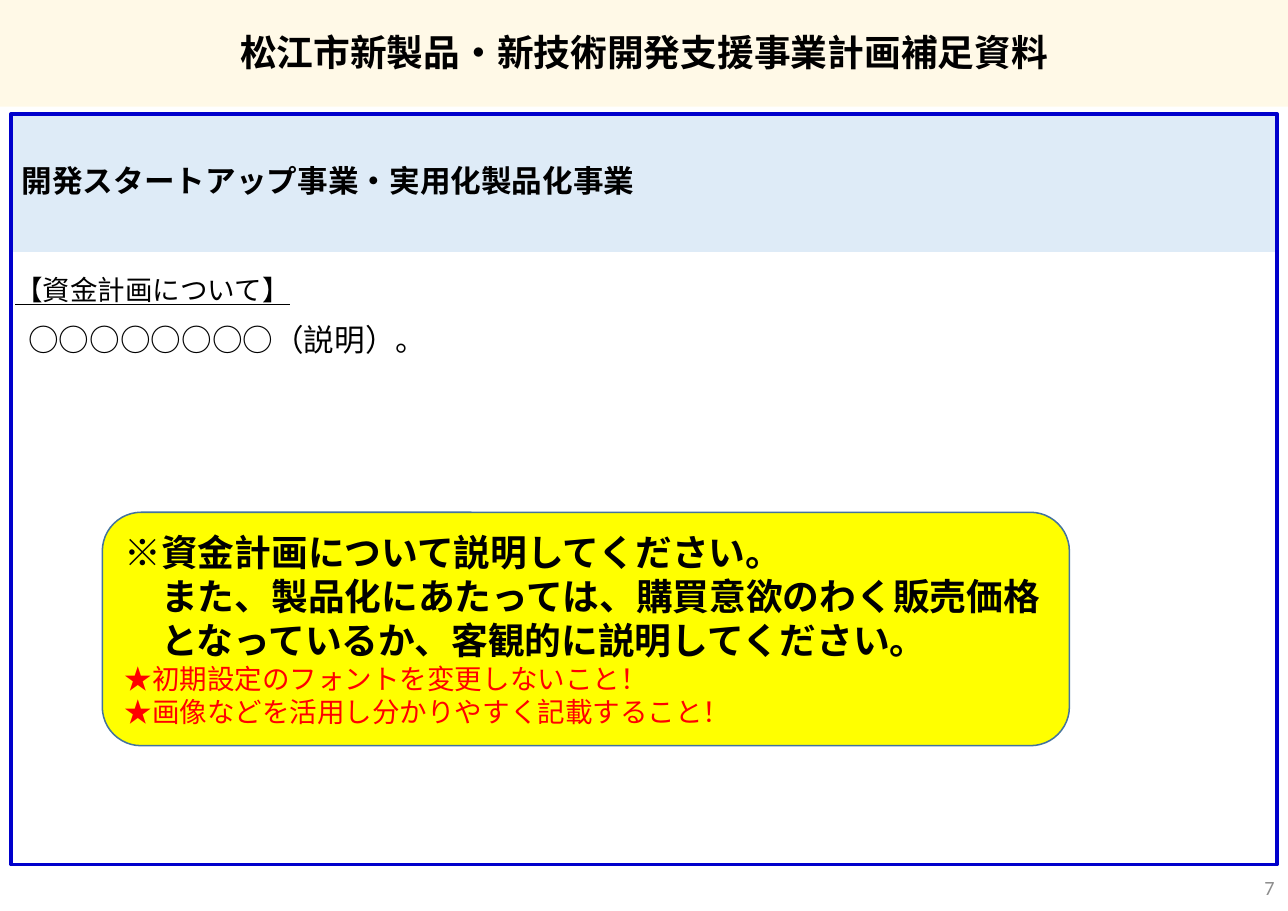
from lxml.etree import SubElement
from pptx import Presentation
from pptx.dml.color import RGBColor
from pptx.enum.shapes import MSO_SHAPE
from pptx.enum.text import MSO_ANCHOR, PP_ALIGN
from pptx.oxml.ns import qn
from pptx.util import Cm, Pt

W, H = 29.7, 21.0
JP = "Noto Sans CJK JP"


def color(value):
    return RGBColor.from_string(value)


def add_box(s, box, fill=None, line=None, width=1, kind=MSO_SHAPE.RECTANGLE):
    sp = s.shapes.add_shape(kind, *map(Cm, box))
    sp.shadow.inherit = False
    if fill:
        sp.fill.solid()
        sp.fill.fore_color.rgb = color(fill)
    else:
        sp.fill.background()
    if line:
        sp.line.color.rgb = color(line)
        sp.line.width = Pt(width)
    else:
        sp.line.fill.background()
    return sp


def set_frame(sp, insets=(0.25, 0.13, 0.25, 0.13), anchor=MSO_ANCHOR.MIDDLE, wrap=True):
    tf = sp.text_frame
    tf.margin_left, tf.margin_top, tf.margin_right, tf.margin_bottom = map(Cm, insets)
    tf.vertical_anchor = anchor
    tf.word_wrap = wrap
    return tf


def style(p, size, font=JP, rgb="000000", bold=False, underline=None,
          align=PP_ALIGN.LEFT, spacing=None, before=0):
    p.alignment = align
    p.line_spacing = spacing
    p.space_before = Pt(before)
    for r in p.runs:
        r.font.size = Pt(size)
        r.font.name = font
        r.font.bold = bold
        r.font.underline = underline
        r.font.color.rgb = color(rgb)
        # East Asian typeface
        SubElement(r.font._element, qn("a:ea"), typeface=font)


def add_title(s, box):
    tf = set_frame(add_box(s, box, "FFF9E7"), (0.25, 0.2, 0.25, 0.13))
    tf.text = "松江市新製品・新技術開発支援事業計画補足資料"
    style(tf.paragraphs[0], 24, bold=True, align=PP_ALIGN.CENTER, spacing=0.9, before=11)


def add_content(s, box):
    x, y, w, h = box
    # Heading band
    tf = set_frame(add_box(s, (x, y, w, 3.18), "DEEBF7"), (0.25, 0, 0.25, 0))
    tf.text = "開発スタートアップ事業・実用化製品化事業"
    style(tf.paragraphs[0], 20, "Arial", bold=True, spacing=0.9)

    # Description
    sp = s.shapes.add_textbox(Cm(x), Cm(y + 4.63), Cm(w - 0.35), Cm(2.08))
    tf = set_frame(sp, (0.4, 0.13, 0, 0.13), MSO_ANCHOR.TOP)
    tf.text = "○○○○○○○○（説明）。"
    style(tf.paragraphs[0], 20, before=11)

    # Blue frame
    add_box(s, box, line="0000CC", width=2.25)

    # Section label
    sp = s.shapes.add_textbox(Cm(x - 0.25), Cm(y + 3.53), Cm(6.93), Cm(1.02))
    tf = set_frame(sp, wrap=False)
    tf.text = "【資金計画について】"
    style(tf.paragraphs[0], 18, underline=True, align=PP_ALIGN.RIGHT)


def add_page_number(s, box):
    tf = set_frame(s.shapes.add_textbox(*map(Cm, box)), wrap=False)
    tf.text = "7"
    style(tf.paragraphs[0], 13.2, "Calibri", "8C8C8C", align=PP_ALIGN.RIGHT)


def add_callout(s, box):
    guidance = ["※資金計画について説明してください。",
                "　また、製品化にあたっては、購買意欲のわく販売価格",
                "　となっているか、客観的に説明してください。"]
    reminders = ["★初期設定のフォントを変更しないこと！",
                 "★画像などを活用し分かりやすく記載すること！"]
    sp = add_box(s, box, "FFFF00", "43739E", kind=MSO_SHAPE.ROUNDED_RECTANGLE)
    tf = set_frame(sp, wrap=False)
    tf.text = "\n".join(guidance + reminders)
    for i, p in enumerate(tf.paragraphs):
        if i < len(guidance):
            style(p, 24, "Calibri", bold=True)
        else:
            style(p, 18, "Calibri", "FF0000")


def main():
    prs = Presentation()
    prs.slide_width, prs.slide_height = Cm(W), Cm(H)
    s = prs.slides.add_slide(prs.slide_layouts[6])
    add_content(s, (0.25, 2.63, W - 0.5, 17.3))
    add_title(s, (0, 0, W, 2.46))
    add_page_number(s, (W - 0.82, 20.02, 0.76, 0.86))
    add_callout(s, (2.36, 11.81, 22.3, 5.38))
    prs.save("out.pptx")


if __name__ == "__main__":
    main()
